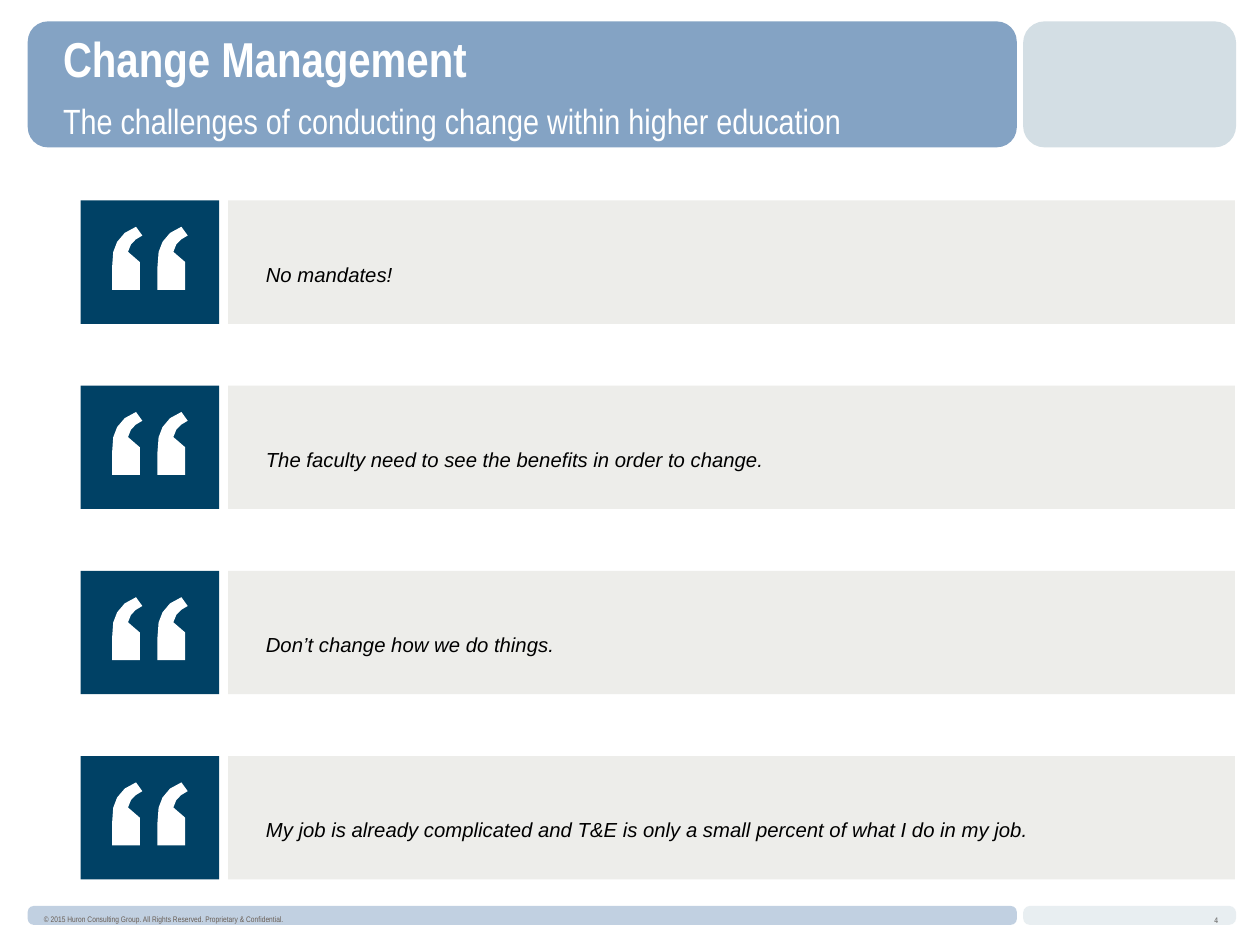
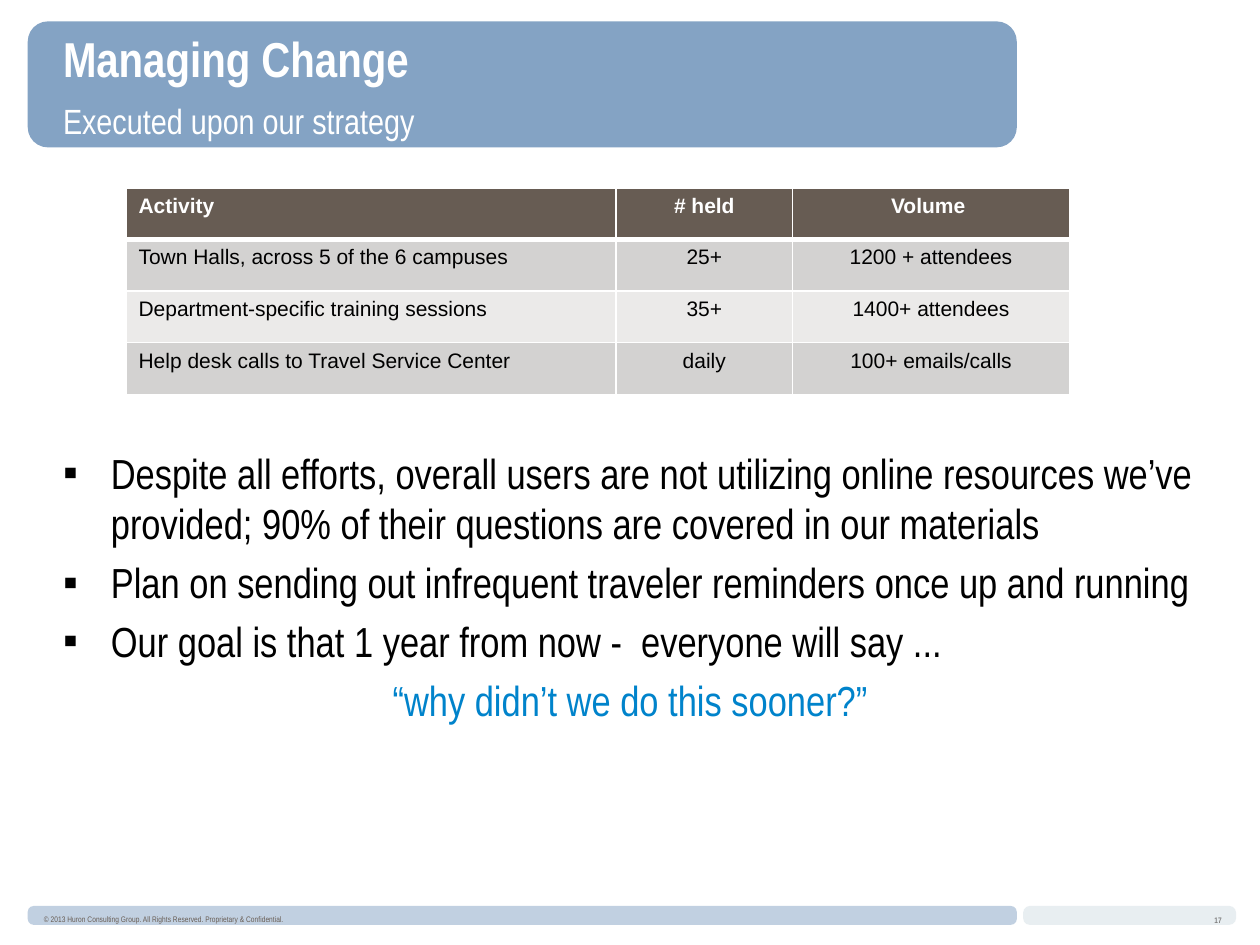
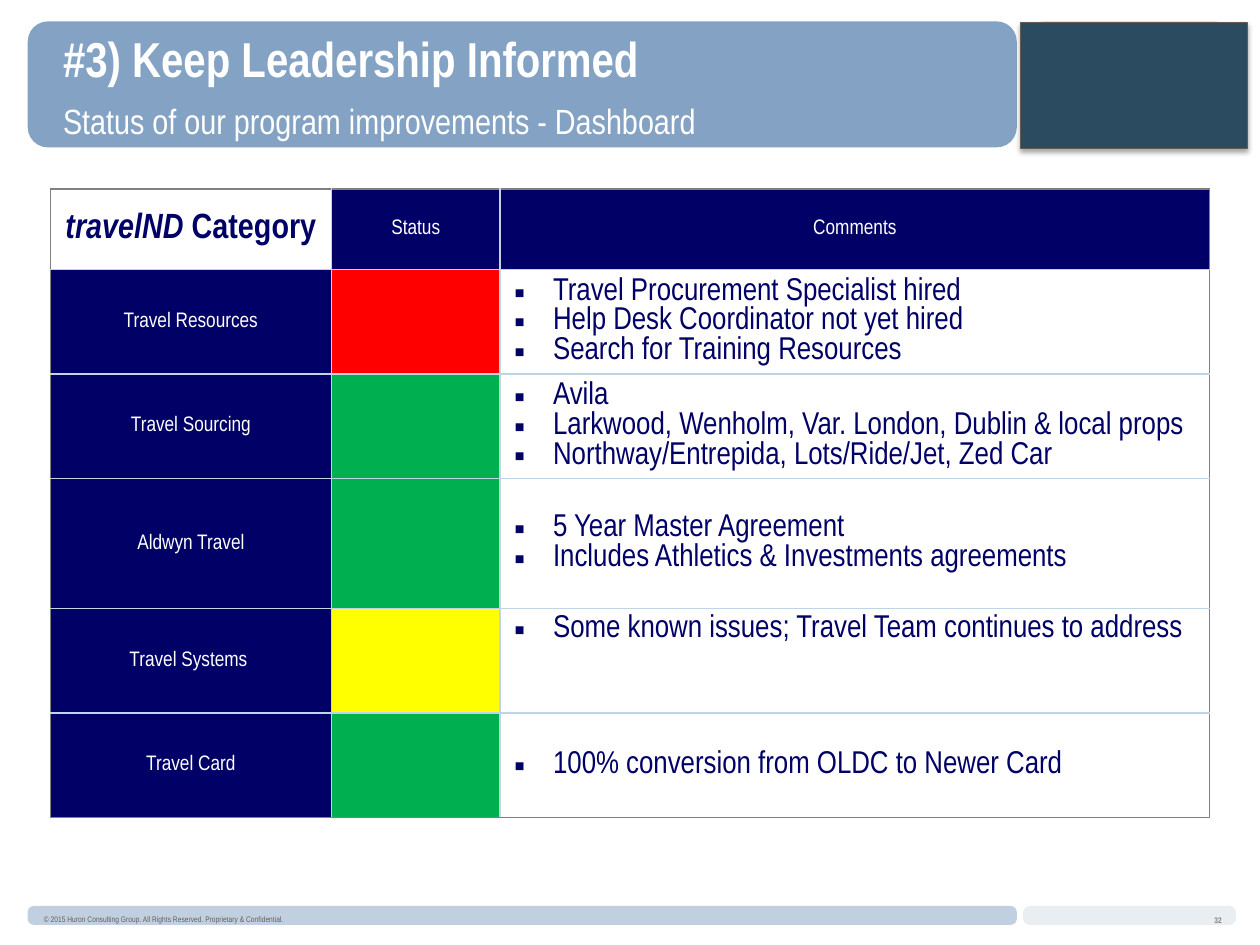
"""Build three slides on managing change in a travel programme."""
from lxml import etree
from pptx import Presentation, util as u
from pptx.dml.color import RGBColor
from pptx.enum import shapes, text
from pptx.oxml import ns

Inches = u.Inches
ALIGN, ANCHOR, SHAPE = text.PP_ALIGN, text.MSO_ANCHOR, shapes.MSO_SHAPE


class Theme:
    sans, narrow = "Arial", "Arial Narrow"
    white, black, navy, grey = "FFFFFF", "000000", "000066", "808080"
    band, band_end, logo_box = "84A3C4", "D3DEE4", "2B4B60"
    quote_tile, quote_panel, accent = "004165", "EDEDEA", "0083CB"
    brown, stripe_dark, stripe_light, grid = "675C53", "D3D2D1", "EBEAE9", "BFD5E3"
    red, green, yellow = "FF0000", "00B050", "FFFF00"
    title, subtitle, body, comment, label, footer = 28, 20, 24, 18, 12, 8
    lowered = -25000


BANDS = [
    (8.12, 7.19, 1.69, 0.15, Theme.band_end, 0.35, 50),
    (0.22, 7.19, 7.85, 0.15, Theme.band, 0.31, 50),
    (8.12, 0.17, 1.69, 1, Theme.band_end, 0.17, 100),
    (0.22, 0.17, 7.85, 1, Theme.band, 0.16, 100),
]
QUOTES = [
    "No mandates!",
    "The faculty need to see the benefits in order to change.",
    "Don’t change how we do things.",
    "My job is already complicated and T&E is only a small percent of what I do in my job.",
]
ACTIVITIES = [
    ("Activity", "# held", "Volume "),
    ("Town Halls, across 5 of the 6 campuses", "25+", "1200 + attendees"),
    ("Department-specific training sessions", "35+", "1400+ attendees"),
    ("Help desk calls to Travel Service Center", "daily", "100+ emails/calls"),
]
LESSONS = [
    "Despite all efforts, overall users are not utilizing online resources we’ve provided; "
    "90% of their questions are covered in our materials",
    "Plan on sending out infrequent traveler reminders once up and running",
    "Our goal is that 1 year from now -  everyone will say ...",
]
GOAL = "“why didn’t we do this sooner?”"
CATEGORY_HEADING = [("travelND ", True), ("Category", False)]
DASHBOARD_HEADINGS = ["Status", "Comments"]
DASHBOARD = [
    ("Travel Resources", Theme.red, ANCHOR.MIDDLE,
     ["Travel Procurement Specialist hired", "Help Desk Coordinator not yet hired",
      "Search for Training Resources"]),
    ("Travel Sourcing", Theme.green, ANCHOR.MIDDLE,
     ["Avila", "Larkwood, Wenholm, Var. London, Dublin & local props",
      "Northway/Entrepida, Lots/Ride/Jet, Zed Car"]),
    ("Aldwyn Travel", Theme.green, ANCHOR.MIDDLE,
     ["5 Year Master Agreement", "Includes Athletics & Investments agreements"]),
    ("Travel Systems ", Theme.yellow, ANCHOR.TOP,
     ["Some known issues; Travel Team continues to address"]),
    ("Travel Card", Theme.green, ANCHOR.MIDDLE,
     ["100% conversion from OLDC to Newer Card"]),
]
MARK_CORNERS = [(0.22, 0.28), (0.22, 0.5), (0, 0.5), (0, 0.32)]
MARK_OUTER = [
    [(0, 0.32), (0, 0.23), (0.01, 0.16), (0.04, 0.12)],
    [(0.04, 0.12), (0.07, 0.07), (0.12, 0.02), (0.19, 0)],
]
MARK_INNER = [
    [(0.24, 0.07), (0.2, 0.09), (0.17, 0.11), (0.15, 0.14)],
    [(0.15, 0.14), (0.13, 0.17), (0.12, 0.22), (0.11, 0.28)],
]


def rgb(color):
    return RGBColor.from_string(color)


def add_xml(parent, tag, **attributes):
    return etree.SubElement(parent, ns.qn(tag), attributes)


def write(frame, lines, size, color, font=Theme.narrow, bold=False, italic=False,
          align=ALIGN.LEFT, bullet=0, gap=0, baseline=None):
    """Add lines to a frame; a line is a string or a list of (text, italic) spans."""
    for line in lines:
        first = not frame.paragraphs[0].runs
        para = frame.paragraphs[0] if first else frame.add_paragraph()
        properties = para._p.get_or_add_pPr()
        properties.set("marL", str(Inches(bullet)))
        properties.set("indent", str(-Inches(bullet)))
        if bullet:
            add_xml(properties, "a:buFont", typeface=Theme.sans)
            add_xml(properties, "a:buChar", char="▪")
        else:
            add_xml(properties, "a:buNone")
        para.alignment = align
        para.space_before = u.Pt(0 if first else gap)
        for words, slanted in [(line, italic)] if isinstance(line, str) else line:
            span = para.add_run()
            span.text = words
            span.font.name, span.font.size = font, u.Pt(size)
            span.font.bold, span.font.italic = bold, slanted
            span.font.color.rgb = rgb(color)
            if baseline:
                span.font._element.set("baseline", str(baseline))


def set_frame(box, anchor=ANCHOR.TOP, left_inset=0.1):
    frame = box.text_frame
    frame.word_wrap, frame.auto_size = True, text.MSO_AUTO_SIZE.NONE
    frame.vertical_anchor = anchor
    frame.margin_left, frame.margin_right = Inches(left_inset), Inches(0.1)
    frame.margin_top = frame.margin_bottom = Inches(0.05)
    return frame


def place(box, left, top, width, height):
    box.left, box.top = Inches(left), Inches(top)
    box.width, box.height = Inches(width), Inches(height)
    return set_frame(box)


def paint(shape, color):
    shape.shadow.inherit = False
    shape.fill.solid()
    shape.fill.fore_color.rgb = rgb(color)
    shape.line.fill.background()


def add_block(page, left, top, width, height, color, kind=SHAPE.RECTANGLE):
    block = page.shapes.add_shape(kind, *map(Inches, (left, top, width, height)))
    paint(block, color)
    return block


def add_master_bands(deck, page):
    tree = deck.slide_master.shapes.element
    for number, (left, top, width, height, color, corner, opacity) in enumerate(BANDS):
        band = add_block(page, left, top, width, height, color, SHAPE.ROUNDED_RECTANGLE)
        band.adjustments[0] = corner
        if opacity < 100:
            tint = band.element.spPr.find(".//" + ns.qn("a:srgbClr"))
            add_xml(tint, "a:alpha", val=str(opacity * 1000))
        band.element.nvSpPr.cNvPr.id = 100 + number
        tree.append(band.element)


def add_page(deck, layout, title, subtitle, number, year):
    page = deck.slides.add_slide(deck.slide_layouts[layout])
    write(place(page.shapes.title, 0.4, 0.18, 8.5, 1.61), [title],
          Theme.title, Theme.white, bold=True)
    write(place(page.placeholders[1], 0.4, 0.74, 7, 0.62), [subtitle],
          Theme.subtitle, Theme.white)
    notice = f"© {year} Huron Consulting Group. All Rights Reserved. Proprietary & Confidential."
    for words, area, color, bold in [
        (str(number), (9.54, 7.11, 0.32, 0.31), Theme.grey, True),
        (notice, (0.25, 7.06, 3.82, 0.4), Theme.brown, False),
    ]:
        box = page.shapes.add_textbox(*map(Inches, area))
        write(set_frame(box, ANCHOR.MIDDLE), [words], Theme.footer, color,
              bold=bold, baseline=Theme.lowered)
    return page


def curve(points, steps=2):
    """Return points along a cubic curve, without its start."""
    a, b, c, d = points
    result = []
    for step in range(1, steps + 1):
        t = step / steps
        s = 1 - t
        result.append(tuple(s**3 * a[i] + 3 * s * s * t * b[i] + 3 * s * t * t * c[i]
                            + t**3 * d[i] for i in (0, 1)))
    return result


def add_quote_mark(page, left, top):
    outline = MARK_CORNERS + [point for part in MARK_OUTER for point in curve(part)]
    outline += MARK_INNER[0][:1] + [point for part in MARK_INNER for point in curve(part)]
    builder = None
    for shift in (0, 0.36):
        points = [((left + shift + x) * 1000, (top + y) * 1000) for x, y in outline]
        if builder is None:
            builder = page.shapes.build_freeform(*points[0], scale=Inches(1) / 1000)
        else:
            builder.move_to(*points[0])
        builder.add_line_segments(points[1:-1], close=True)
    paint(builder.convert_to_shape(), Theme.white)


def add_grid(page, left, top, columns, rows):
    frame = page.shapes.add_table(len(rows), len(columns), Inches(left), Inches(top),
                                  Inches(sum(columns)), Inches(sum(rows)))
    table = frame.table
    table.first_row = table.horz_banding = False
    for parts, sizes, side in ((table.columns, columns, "width"), (table.rows, rows, "height")):
        for part, size in zip(parts, sizes):
            setattr(part, side, Inches(size))
    return table


def style_cell(cell, fill, edges, anchor=ANCHOR.TOP, inset=0.1):
    """Set fill, anchor and insets; edges are (color, points) for left, right, top, bottom."""
    cell.vertical_anchor = anchor
    cell.margin_left = cell.margin_right = Inches(inset)
    properties = cell._tc.get_or_add_tcPr()
    for side, (color, points) in zip("LRTB", edges):
        line = add_xml(properties, "a:ln" + side, w=str(u.Pt(points)))
        add_xml(add_xml(line, "a:solidFill"), "a:srgbClr", val=color)
    if fill:
        cell.fill.solid()
        cell.fill.fore_color.rgb = rgb(fill)
    else:
        cell.fill.background()


def build_quotes(page):
    for row, quote in enumerate(QUOTES):
        top = 1.59 + row * 1.47
        panel = add_block(page, 1.81, top, 7.99, 0.98, Theme.quote_panel)
        write(set_frame(panel, ANCHOR.MIDDLE, 0.3), [quote], Theme.subtitle, Theme.black,
              font=Theme.sans, italic=True, baseline=Theme.lowered)
        add_block(page, 0.64, top, 1.1, 0.98, Theme.quote_tile)
        add_quote_mark(page, 0.89, top + 0.21)


def build_activities(page):
    frame = place(page.placeholders[2], 0.4, 3.5, 9.2, 3.49)
    write(frame, LESSONS, Theme.body, Theme.black, bullet=0.38, gap=4.8)
    write(frame, [GOAL], Theme.body, Theme.accent, align=ALIGN.CENTER, gap=4.8)
    add_block(page, 8.12, 0.14, 1.77, 1.04, Theme.white)
    table = add_grid(page, 1, 1.49, [3.89, 1.4, 2.2], [0.41] * len(ACTIVITIES))
    thin, thick = (Theme.white, 1), (Theme.white, 3)
    for row, values in enumerate(ACTIVITIES):
        header = row == 0
        stripe = Theme.stripe_dark if row % 2 else Theme.stripe_light
        for column, value in enumerate(values):
            cell = table.cell(row, column)
            edges = [thin, thin, thick if row == 1 else thin, thick if header else thin]
            style_cell(cell, Theme.brown if header else stripe, edges)
            write(cell.text_frame, [value], Theme.label,
                  Theme.white if header else Theme.black, font=Theme.sans, bold=header,
                  align=ALIGN.CENTER if column else ALIGN.LEFT)


def build_dashboard(page):
    rows = [0.64, 0.83, 0.83, 1.03, 0.83, 0.83]
    table = add_grid(page, 0.4, 1.5, [2.23, 1.34, 5.63], rows)
    outer, inner = (Theme.grey, 1), (Theme.grid, 1)

    def fill_cell(row, column, fill, lines=(), anchor=ANCHOR.MIDDLE, **style):
        cell = table.cell(row, column)
        at_edge = [column == 0, column == 2, row == 0, row == len(rows) - 1]
        style_cell(cell, fill, [outer if edge else inner for edge in at_edge], anchor, 0.11)
        write(cell.text_frame, lines, **style)

    label = dict(size=Theme.label, color=Theme.white, align=ALIGN.CENTER)
    comment = dict(size=Theme.comment, color=Theme.navy, bullet=0.31)
    fill_cell(0, 0, None, [CATEGORY_HEADING], size=Theme.subtitle, color=Theme.navy,
              bold=True, align=ALIGN.CENTER)
    for column, heading in enumerate(DASHBOARD_HEADINGS, 1):
        fill_cell(0, column, Theme.navy, [heading], **label)
    for row, (category, status, anchor, comments) in enumerate(DASHBOARD, 1):
        fill_cell(row, 0, Theme.navy, [category], **label)
        fill_cell(row, 1, status, **label)
        fill_cell(row, 2, None, comments, anchor, **comment)

    logo_box = add_block(page, 8.1, 0.18, 1.8, 1, Theme.logo_box)
    logo_box.line.color.rgb, logo_box.line.width = rgb(Theme.brown), u.Pt(0.75)
    effects = logo_box.element.spPr.find(ns.qn("a:effectLst"))
    shadow = add_xml(effects, "a:outerShdw", blurRad=str(u.Pt(3.1)), dist=str(u.Pt(1.8)),
                     dir="5400000", rotWithShape="0")
    add_xml(add_xml(shadow, "a:srgbClr", val=Theme.black), "a:alpha", val="35000")


def main():
    deck = Presentation()
    deck.slide_width, deck.slide_height = Inches(10), Inches(7.5)
    quotes = add_page(deck, 0, "Change Management",
                      "The challenges of conducting change within higher education", 4, 2015)
    add_master_bands(deck, quotes)
    build_quotes(quotes)
    build_activities(add_page(deck, 3, "Managing Change", "Executed upon our strategy", 17, 2013))
    build_dashboard(add_page(deck, 0, "#3) Keep Leadership Informed",
                             "Status of our program improvements - Dashboard", 32, 2015))
    deck.save("out.pptx")


if __name__ == "__main__":
    main()
